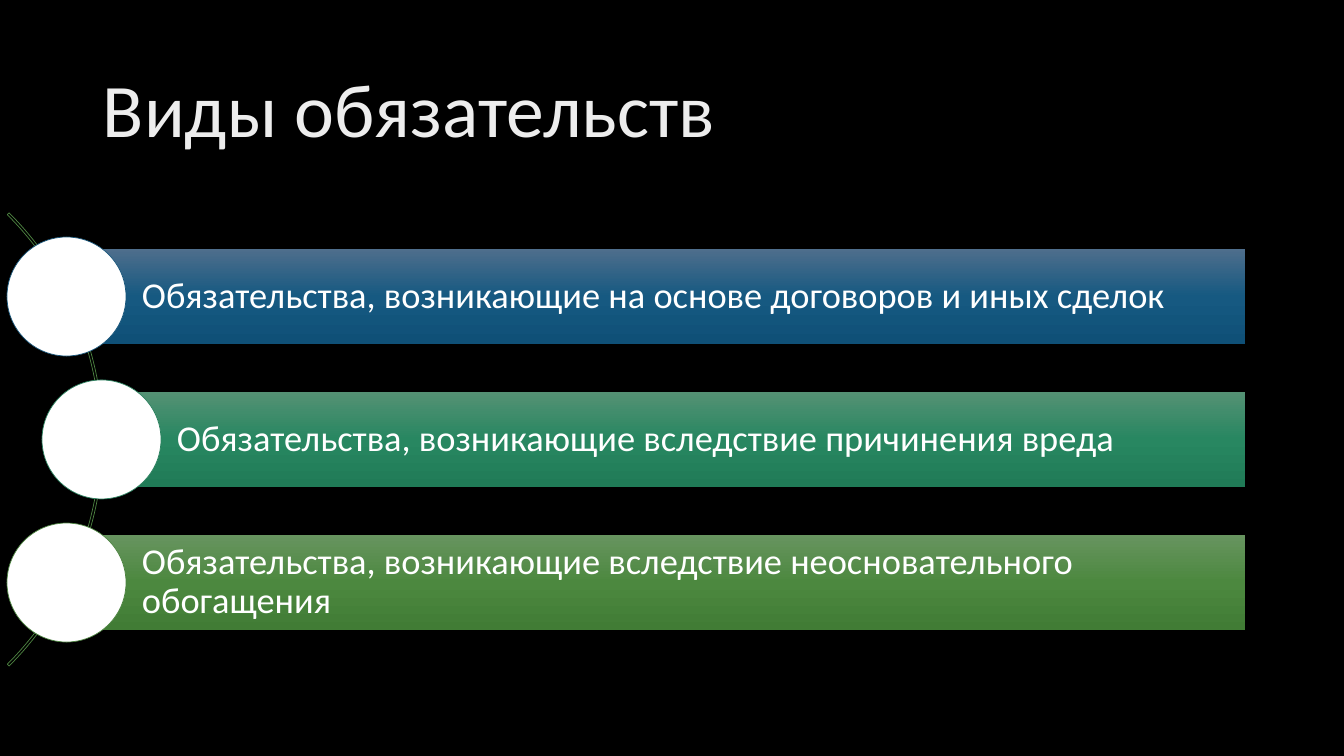
import copy

import pptx
import pptx.dml.color
import pptx.enum.shapes
import pptx.enum.text
import pptx.oxml.ns
import pptx.util

EMU_PER_INCH = 914400
PX_PER_INCH = 100.8
SHAPES = pptx.enum.shapes.MSO_SHAPE
FIRST_BAR_TOP, BAR_STEP, BAR_HEIGHT, BAR_RIGHT = 249, 143, 95, 1245
CIRCLE_SIZE = 119
DUTIES = [
    ("Обязательства, возникающие на основе договоров и иных сделок",
     66, ("4E6E8C", "165981", "0F5077"), "1B587C"),
    ("Обязательства, возникающие вследствие причинения вреда",
     101, ("549174", "288761", "207B57"), "2D8260"),
    ("Обязательства, возникающие вследствие неосновательного обогащения",
     66, ("67945F", "4C883F", "417C35"), "4E8542"),
]


def px(length):
    """Turn pixels into EMU."""
    return pptx.util.Emu(round(length * EMU_PER_INCH / PX_PER_INCH))


def paint(color, value):
    """Set a colour from a hex string."""
    color.rgb = pptx.dml.color.RGBColor.from_string(value)


def write_text(shape, text, size, color, insets):
    """Write one left-aligned, vertically centred paragraph."""
    frame = shape.text_frame
    frame.word_wrap = True
    frame.vertical_anchor = pptx.enum.text.MSO_ANCHOR.MIDDLE
    frame.margin_left, frame.margin_top, frame.margin_right, frame.margin_bottom = map(px, insets)
    paragraph = frame.paragraphs[0]
    paragraph.text = text
    paragraph.alignment = pptx.enum.text.PP_ALIGN.LEFT
    paragraph.line_spacing = 0.9
    paragraph.font.name = "Calibri"
    paragraph.font.size = pptx.util.Pt(size)
    paint(paragraph.font.color, color)


def add_title(slide, text):
    """Add the slide title."""
    box = slide.shapes.add_textbox(px(93), px(40), px(1159), px(146))
    write_text(box, text, 54, "EDEDED", (10, 5, 10, 5))


def add_outlined(slide, kind, left, top, size, line_color):
    """Add a square-framed shape with a thin outline and no fill."""
    shape = slide.shapes.add_shape(kind, px(left), px(top), px(size), px(size))
    shape.shadow.inherit = False
    shape.fill.background()
    shape.line.width = pptx.util.Pt(0.5)
    paint(shape.line.color, line_color)
    return shape


def add_arc(slide):
    """Add the thin arc that links the circles."""
    arc = add_outlined(slide, SHAPES.BLOCK_ARC, -538, 119, 641, "4E8542")
    for index, value in enumerate((189, 27, 0.004)):
        arc.adjustments[index] = value


def fill_gradient(shape, colors):
    """Fill a shape from top to bottom with three evenly spaced colours."""
    shape.fill.gradient()
    shape.fill.gradient_angle = 270
    stop_list = shape._element.spPr.find(".//" + pptx.oxml.ns.qn("a:gsLst"))
    stop_list.append(copy.deepcopy(stop_list[-1]))
    for index, (stop, color) in enumerate(zip(shape.fill.gradient_stops, colors)):
        stop.position = index / 2
        paint(stop.color, color)


def add_duty(slide, row, text, left, colors, line_color):
    """Add one gradient bar with the circle at its left end."""
    top = FIRST_BAR_TOP + row * BAR_STEP
    bar = slide.shapes.add_shape(
        SHAPES.RECTANGLE, px(left), px(top), px(BAR_RIGHT - left), px(BAR_HEIGHT))
    bar.shadow.inherit = False
    bar.line.fill.background()
    fill_gradient(bar, colors)
    write_text(bar, text, 26, "FFFFFF", (76, 7, 7, 7))
    circle = add_outlined(slide, SHAPES.OVAL, left - CIRCLE_SIZE // 2,
                          top - (CIRCLE_SIZE - BAR_HEIGHT) // 2, CIRCLE_SIZE, line_color)
    circle.fill.solid()
    paint(circle.fill.fore_color, "FFFFFF")


def main():
    """Build and save the slide."""
    presentation = pptx.Presentation()
    presentation.slide_width, presentation.slide_height = px(1344), px(756)
    slide = presentation.slides.add_slide(presentation.slide_layouts[6])
    slide.background.fill.solid()
    paint(slide.background.fill.fore_color, "000000")
    add_title(slide, "Виды обязательств")
    add_arc(slide)
    for row, duty in enumerate(DUTIES):
        add_duty(slide, row, *duty)
    presentation.save("out.pptx")


if __name__ == "__main__":
    main()
